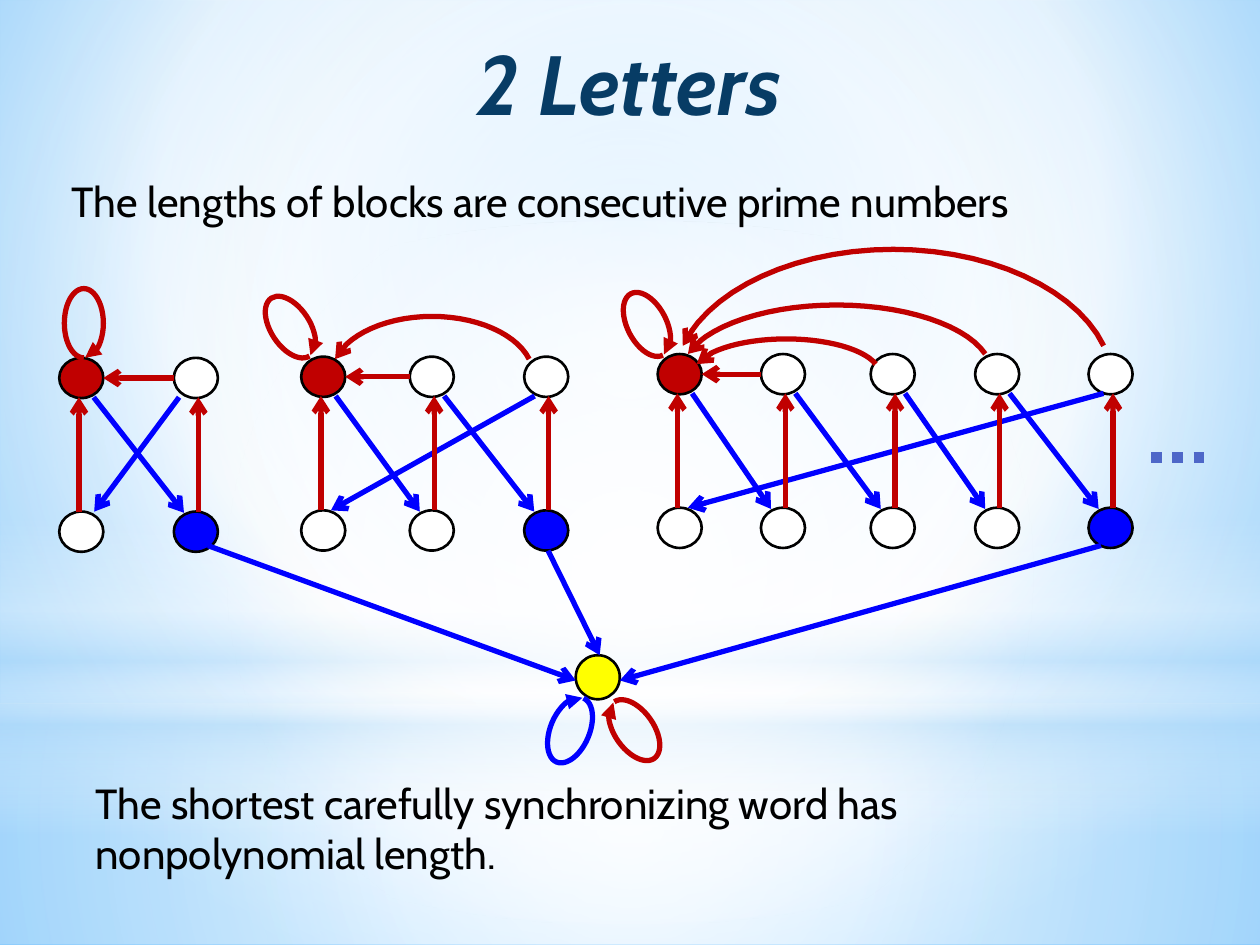
from lxml import etree
from pptx import Presentation
from pptx.dml.color import RGBColor
from pptx.enum.dml import MSO_LINE
from pptx.enum.shapes import MSO_CONNECTOR, MSO_SHAPE
from pptx.enum.text import MSO_ANCHOR, PP_ALIGN
from pptx.oxml import parse_xml
from pptx.oxml.ns import nsdecls, qn
from pptx.util import Pt

COLORS = {"red": "C00000", "blue": "0000FF", "yellow": "FFFF00", "white": "FFFFFF",
          "black": "000000", "title": "073C65", "dots": "4E67C8",
          "sky": "9ED5FF", "deep": "5BB9FF", "pale": "B4DCFA"}
FONT = "Cabin"
NODE_WIDTH, NODE_HEIGHT, ROW_STEP = 25.2, 23, 87.84
GOAL_BOX = (329, 374.4)
BLOCKS = [
    {"box": (33.84, 204.5), "columns": [0, 65.5], "back": (3, 20), "exit": (85, 107.3),
     "loop": (2.9, -39.6, 180), "arches": [], "goal": (329, 388.8)},
    {"box": (172.1, 203.8), "columns": [0, 62, 127.4], "back": (6, 17), "exit": (141.1, 110.9),
     "loop": (-17.3, -36.7, 146.6), "arches": [(19.4, 130.3, 1.4, -23)], "goal": (342.7, 374.4)},
    {"box": (375.8, 202.3), "columns": [0, 59, 121.7, 181.4, 246.2], "back": (8.6, 17.3),
     "exit": (253.4, 109.4), "loop": (-17.3, -36.7, 152.4), "goal": (354.2, 388.8),
     "arches": [(17.3, 187.2, 0, -28), (22.3, 124.6, 5.8, -8.6), (14.4, 254.9, -4.7, -59.8)]},
]


def rgb(name):
    """Return the named colour."""
    return RGBColor.from_string(COLORS[name])


def gradient_fill(fill, owner, stops, focus=None):
    """Give a fill gradient stops, around a focus rectangle or from top to bottom."""
    fill.solid()
    stop_xml = "".join(
        f'<a:gs pos="{position * 1000}"><a:srgbClr val="{COLORS[color]}">'
        f'<a:alpha val="{alpha * 1000}"/></a:srgbClr></a:gs>' for position, color, alpha in stops)
    direction = '<a:lin ang="5400000" scaled="0"/>'
    if focus:
        sides = " ".join(f'{side}="{value * 1000}"' for side, value in zip("ltrb", focus))
        direction = f'<a:path path="circle"><a:fillToRect {sides}/></a:path>'
    gradient = parse_xml(f'<a:gradFill {nsdecls("a")} rotWithShape="1"><a:gsLst>{stop_xml}'
                         f'</a:gsLst>{direction}</a:gradFill>')
    owner.replace(owner.find(qn("a:solidFill")), gradient)


def add_backdrop(slide):
    """Paint the background and its soft light layers."""
    gradient_fill(slide.background.fill, slide.element.find(".//" + qn("p:bgPr")),
                  [(0, "sky", 100), (60, "white", 100), (100, "deep", 100)], (20, 10, 20, 60))
    center = (50, 50, 50, 50)
    layers = [
        (MSO_SHAPE.RECTANGLE, 402, 138, [(0, "white", 91), (37, "white", 76), (100, "pale", 79)], center),
        (MSO_SHAPE.RECTANGLE, 0, 402, [(0, "white", 89), (48, "white", 62), (100, "pale", 79)], center),
        (MSO_SHAPE.RECTANGLE, 296.6, 180, [(0, "white", 0), (29, "white", 30), (45, "pale", 40),
                                           (55, "white", 26), (65, "pale", 60), (100, "white", 0)], None),
        (MSO_SHAPE.OVAL, 126, 402, [(0, "white", 100), (56, "white", 0)], center),
    ]
    for kind, top, height, stops, focus in layers:
        shape = slide.shapes.add_shape(kind, 0, Pt(top), Pt(720), Pt(height))
        shape.shadow.inherit = False
        shape.line.fill.background()
        gradient_fill(shape.fill, shape.element.spPr, stops, focus)


def add_text(slide, box, text, size, color, align=PP_ALIGN.LEFT, strong=False):
    """Write one paragraph in the given box."""
    frame = slide.shapes.add_textbox(*map(Pt, box)).text_frame
    frame.word_wrap = True
    frame.vertical_anchor = MSO_ANCHOR.TOP
    paragraph = frame.paragraphs[0]
    paragraph.alignment = align
    run = paragraph.add_run()
    run.text = text
    run.font.name, run.font.size = FONT, Pt(size)
    run.font.bold = run.font.italic = strong
    run.font.color.rgb = rgb(color)


def style_line(shape, color, width=3, end=None, head="arrow"):
    """Colour a line and put an arrowhead on its headEnd or tailEnd."""
    shape.line.color.rgb = rgb(color)
    shape.line.width = Pt(width)
    if end:
        etree.SubElement(shape.get_or_add_ln(), qn(f"a:{end}"), type=head)


def add_line(slide, start, finish, color, width=3, end="tailEnd"):
    """Draw a straight line between two points."""
    line = slide.shapes.add_connector(MSO_CONNECTOR.STRAIGHT, *map(Pt, (*start, *finish)))
    style_line(line, color, width, end)
    etree.SubElement(line.element.spPr, qn("a:effectLst"))
    return line


def add_node(slide, left, top, color, height=NODE_HEIGHT):
    """Draw one state of the automaton."""
    node = slide.shapes.add_shape(MSO_SHAPE.OVAL, *map(Pt, (left, top, NODE_WIDTH, height)))
    node.shadow.inherit = False
    node.fill.solid()
    node.fill.fore_color.rgb = rgb(color)
    style_line(node, "black", 1.5)


def add_loop(slide, left, top, rotation, color):
    """Draw a self-loop as a nearly full arc."""
    loop = slide.shapes.add_shape(MSO_SHAPE.ARC, *map(Pt, (left, top, 22.3, 39.6)))
    loop.shadow.inherit = False
    loop.fill.background()
    loop.adjustments[0], loop.adjustments[1] = 270 * 0.6, 268 * 0.6
    loop.rotation = rotation
    style_line(loop, color, 3, "tailEnd", "triangle")


def add_arch(slide, left, right, base, apex):
    """Draw a symmetric arch with its arrowhead at the left foot."""
    half, rise, steps = (right - left) / 2, base - apex, 14
    rising = []
    for step in range(steps + 1):
        t = step / steps
        across = 3 * (1 - t) ** 2 * t * 0.13 + 3 * (1 - t) * t ** 2 * 0.54 + t ** 3
        up = 3 * (1 - t) ** 2 * t * 0.59 + 3 * (1 - t) * t ** 2 + t ** 3
        rising.append((left + half * across, base - rise * up))
    outline = rising + [(left + right - x, y) for x, y in reversed(rising[:-1])]
    points = [(Pt(x), Pt(y)) for x, y in outline]
    builder = slide.shapes.build_freeform(*points[0])
    builder.add_line_segments(points[1:], close=False)
    arch = builder.convert_to_shape()
    arch.shadow.inherit = False
    arch.fill.background()
    style_line(arch, "red", 3, "headEnd")


def add_block(slide, block):
    """Draw one block of paired states with its transitions to the goal."""
    left, top = block["box"]
    columns = [left + offset for offset in block["columns"]]
    low, under, middle = top + ROW_STEP, top + 22.5, top + NODE_HEIGHT / 2
    last = len(columns) - 1
    for i, x in enumerate(columns):
        add_node(slide, x, top, "white" if i else "red")
        add_node(slide, x, low, "blue" if i == last else "white")
    for x, following in zip(columns, columns[1:]):
        add_line(slide, (x + 19.7, under), (following + 5.8, low + 0.7), "blue")
    start, finish = block["back"]
    add_line(slide, (columns[-1] + start, under), (left + finish, low), "blue")
    exit_x, exit_y = block["exit"]
    add_line(slide, (left + exit_x, top + exit_y), block["goal"], "blue")
    for i, x in enumerate(columns):
        riser = x + (14 if i else 11.3)
        add_line(slide, (riser, low), (riser, under), "red")
    add_line(slide, (columns[1], middle), (left + NODE_WIDTH, middle), "red")
    x, y, rotation = block["loop"]
    add_loop(slide, left + x, top + y, rotation, "red")
    for foot, far_foot, base, apex in block["arches"]:
        add_arch(slide, left + foot, left + far_foot, top + base, top + apex)


def add_goal(slide, left, top):
    """Draw the goal state with its two self-loops."""
    add_node(slide, left, top, "yellow", NODE_WIDTH)
    add_loop(slide, left - 14.4, top + 23, 22.9, "blue")
    add_loop(slide, left + 22.3, top + 23, 324.8, "red")


def main():
    """Build the slide and save it."""
    presentation = Presentation()
    presentation.slide_width, presentation.slide_height = Pt(720), Pt(540)
    slide = presentation.slides.add_slide(presentation.slide_layouts[6])
    add_backdrop(slide)
    add_text(slide, (35.3, 14.4, 648, 55.4), "2 Letters", 48, "title", PP_ALIGN.CENTER, True)
    add_goal(slide, *GOAL_BOX)
    for block in BLOCKS:
        add_block(slide, block)
    add_text(slide, (47.5, 440.6, 626.4, 65.5),
             "The shortest carefully synchronizing word has nonpolynomial length.", 24, "black")
    add_text(slide, (33.84, 96.5, 657.4, 36),
             "The lengths of blocks are consecutive prime numbers", 24, "black")
    dots = add_line(slide, (658, 261.4), (691.2, 261.4), "dots", 6, None)
    dots.line.dash_style = MSO_LINE.ROUND_DOT
    presentation.save("out.pptx")


if __name__ == "__main__":
    main()
